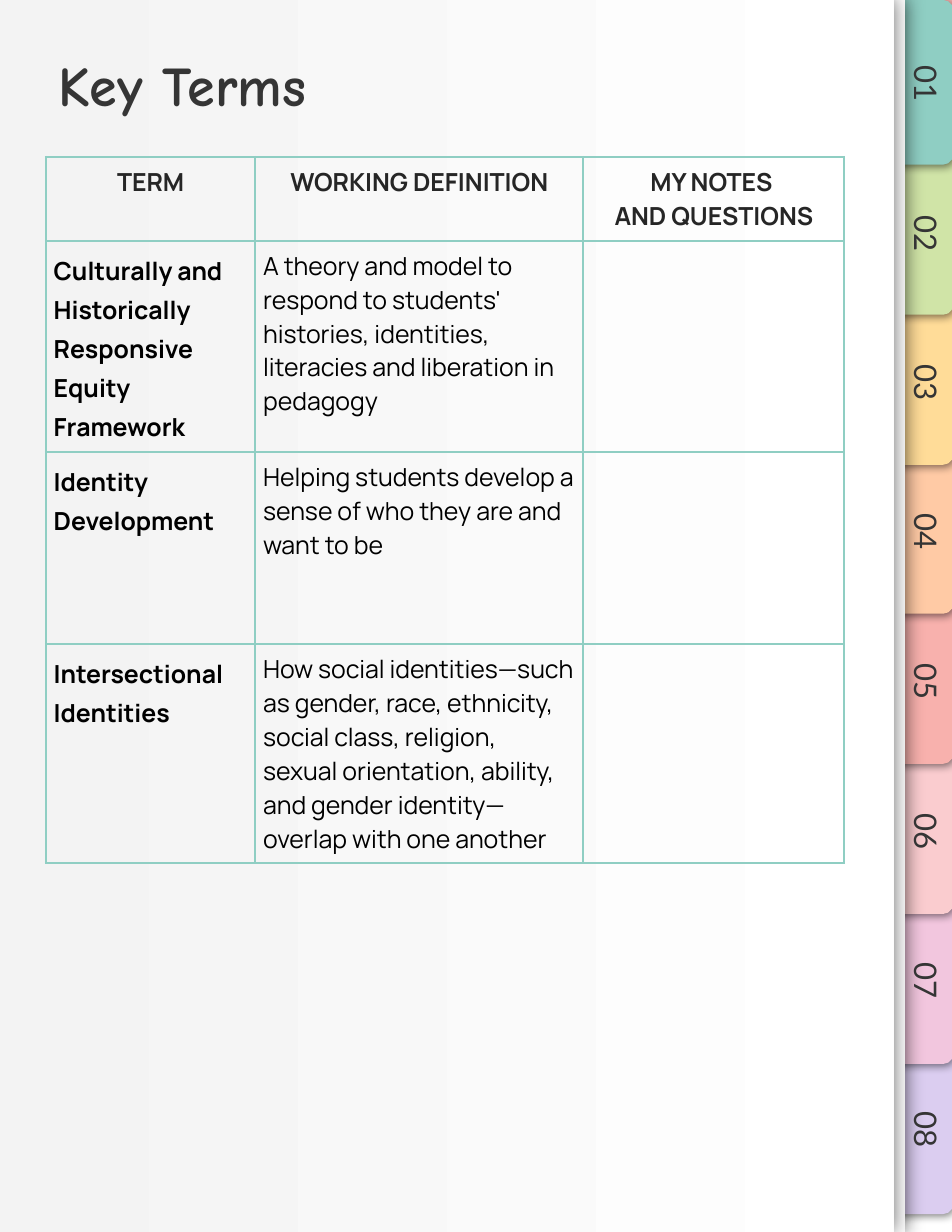
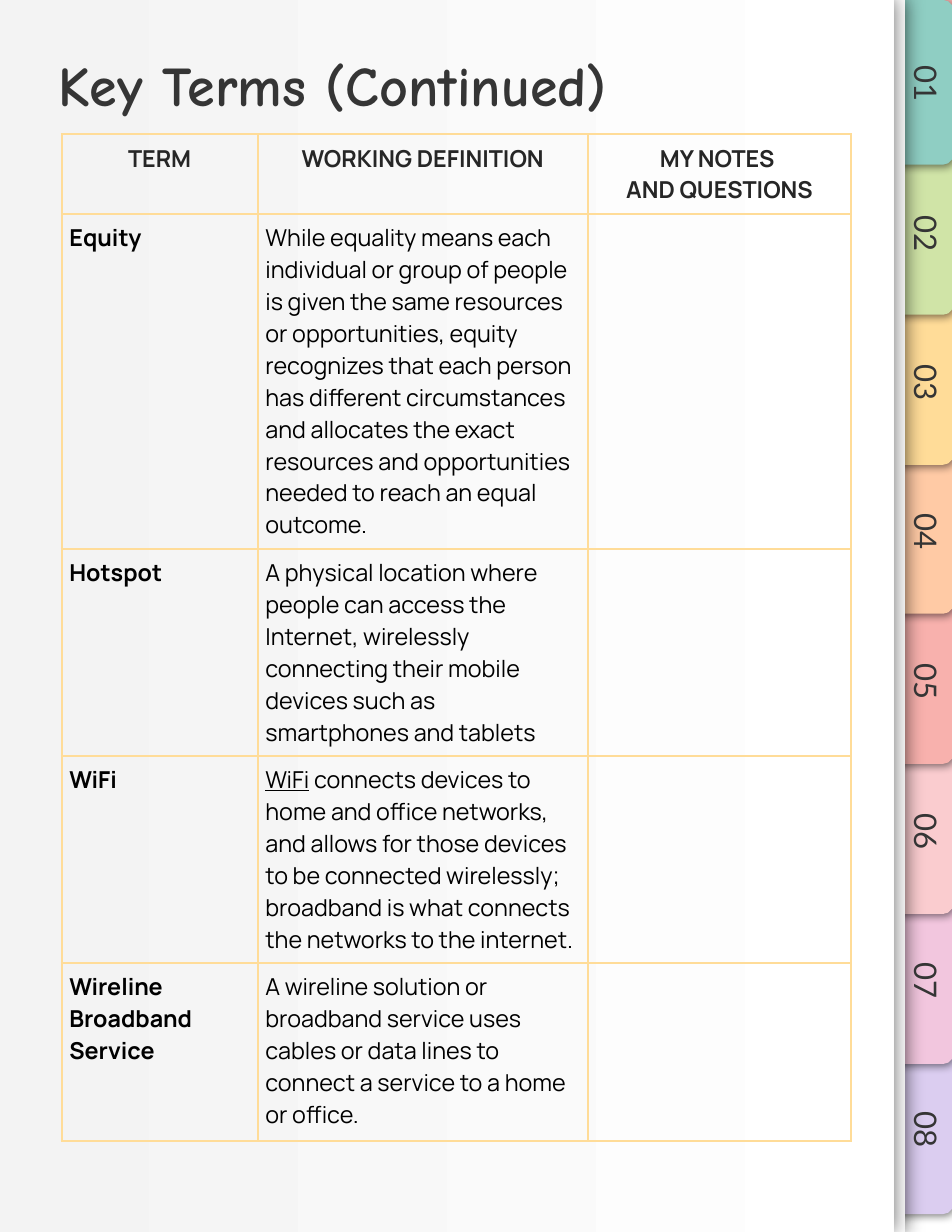
"""Build two key-terms pages of a tabbed notebook."""
import lxml.etree
import pptx
import pptx.dml.color
import pptx.enum.shapes
import pptx.enum.text
import pptx.oxml.ns
import pptx.util

PX = 9144
W, H = 850, 1100

RGB = pptx.dml.color.RGBColor
SHAPE = pptx.enum.shapes.MSO_SHAPE
ALIGN = pptx.enum.text.PP_ALIGN
ANCHOR = pptx.enum.text.MSO_ANCHOR

WHITE = RGB(0xFF, 0xFF, 0xFF)
BLACK = RGB(0x00, 0x00, 0x00)
GREY = RGB(0xF3, 0xF3, 0xF3)
INK = RGB(0x35, 0x35, 0x35)
HEAD = RGB(0x26, 0x26, 0x26)
TEAL = RGB(0x8F, 0xCE, 0xC3)
GREEN = RGB(0xD0, 0xE4, 0xA7)
YELLOW = RGB(0xFF, 0xDC, 0x98)
ORANGE = RGB(0xFF, 0xCA, 0xA5)
CORAL = RGB(0xF8, 0xB1, 0xAD)
ROSE = RGB(0xFA, 0xCC, 0xCF)
PINK = RGB(0xF2, 0xC6, 0xDE)
LILAC = RGB(0xDB, 0xCD, 0xF0)
TABS = [TEAL, GREEN, YELLOW, ORANGE, CORAL, ROSE, PINK, LILAC]

TAB_SHADOW = (5.6, 1.5, 61)
SHEET_SHADOW = (12.4, 0.8, 0)
HEADINGS = ["TERM", "WORKING DEFINITION", "MY NOTES \nAND QUESTIONS"]


def add(parent, tag, **attrs):
    """Append a DrawingML child element with the given attributes."""
    attrs = {k: str(v) for k, v in attrs.items()}
    return lxml.etree.SubElement(parent, pptx.oxml.ns.qn("a:" + tag), attrs)


def write(tf, text, size=16, font="Manrope", color=BLACK, bold=False,
          align=ALIGN.LEFT, spacing=None, underlined=""):
    """Write text into a frame, one paragraph per line, underlining its opening word if asked."""
    for i, line in enumerate(text.split("\n")):
        p = tf.add_paragraph() if i else tf.paragraphs[0]
        p.alignment = align
        if spacing:
            p.line_spacing = spacing
        for part, under in ((underlined, True), (line.removeprefix(underlined), False)):
            if not part:
                continue
            r = p.add_run()
            r.text = part
            r.font.size = pptx.util.Pt(size)
            r.font.name = font
            r.font.bold = bold
            r.font.underline = under
            r.font.color.rgb = color


class Notebook:
    """Holds the presentation, its style and the current slide."""

    def __init__(self):
        """Start an empty letter-size presentation."""
        self.prs = pptx.Presentation()
        self.prs.slide_width, self.prs.slide_height = W * PX, H * PX
        self.slide = None

    def shape(self, kind, x, y, w, h, fill, line=None, rotation=0, shadow=None):
        """Add a filled preset shape; fill is one colour or a pair for a gradient."""
        sp = self.slide.shapes.add_shape(kind, x * PX, y * PX, w * PX, h * PX)
        sp.rotation = rotation
        if isinstance(fill, list):
            sp.fill.gradient()
            sp.fill.gradient_angle = 0
            for stop, color in zip(sp.fill.gradient_stops, fill):
                stop.color.rgb = color
        else:
            sp.fill.solid()
            sp.fill.fore_color.rgb = fill
        if line:
            sp.line.color.rgb = line
            sp.line.width = pptx.util.Pt(0.75)
        else:
            sp.line.fill.background()
        sp.shadow.inherit = False
        if shadow:
            blur, dist, angle = shadow
            effects = sp._element.spPr.find(pptx.oxml.ns.qn("a:effectLst"))
            outer = add(effects, "outerShdw", blurRad=int(blur * 12700),
                        dist=int(dist * 12700), dir=angle * 60000,
                        algn="bl", rotWithShape=0)
            add(add(outer, "srgbClr", val=BLACK), "alpha", val=50000)
        return sp

    def text(self, text, x, y, w, h, rotation=0, anchor=ANCHOR.TOP, **style):
        """Add a wrapped text box."""
        sp = self.slide.shapes.add_textbox(x * PX, y * PX, w * PX, h * PX)
        sp.rotation = rotation
        tf = sp.text_frame
        tf.word_wrap = True
        tf.vertical_anchor = anchor
        tf.margin_left = tf.margin_right = tf.margin_top = tf.margin_bottom = 10 * PX
        write(tf, text, **style)

    def page(self, title):
        """Start a page with its index tabs, paper sheets and title."""
        self.slide = self.prs.slides.add_slide(self.prs.slide_layouts[6])
        self.slide.background.fill.solid()
        self.slide.background.fill.fore_color.rgb = CORAL
        self.shape(SHAPE.RECTANGLE, 808, 858, 42, 242, WHITE, line=WHITE)
        for i, color in reversed(list(enumerate(TABS))):
            sp = self.shape(SHAPE.ROUND_2_SAME_RECTANGLE, 751, 47 + round(i * 133.8),
                            147, 53, color, rotation=90, shadow=TAB_SHADOW)
            sp.adjustments[0] = 0.167
        self.shape(SHAPE.RECTANGLE, 10, 0, 798, H, WHITE, shadow=SHEET_SHADOW)
        self.shape(SHAPE.RECTANGLE, 0, 0, 798, H, [GREY, WHITE], shadow=SHEET_SHADOW)
        for i in range(len(TABS)):
            self.text(f"{i + 1:02}", 760, 43 + round(i * 133.5), 144, 63, rotation=90,
                      anchor=ANCHOR.BOTTOM, size=20, font="Lato", color=INK,
                      align=ALIGN.CENTER)
        self.text(title, 42, 35, 712, 63, size=36, font="Comic Neue", color=INK, bold=True)

    def cell(self, cell, border):
        """Clear a cell's fill, set its margins and draw its four borders."""
        cell.margin_left = cell.margin_right = cell.margin_top = cell.margin_bottom = 7 * PX
        cell.fill.background()
        props = cell._tc.get_or_add_tcPr()
        for i, side in enumerate("LRTB"):
            ln = add(props, "ln" + side, w=19050)
            add(add(ln, "solidFill"), "srgbClr", val=border)
            props.insert(i, ln)

    def table(self, x, y, widths, heights, terms, border, size, term_spacing=None):
        """Add a table of terms and definitions with an empty notes column."""
        table = self.slide.shapes.add_table(
            len(heights), len(widths), x * PX, y * PX,
            sum(widths) * PX, sum(heights) * PX).table
        table.first_row = table.horz_banding = False
        for col, width in zip(table.columns, widths):
            col.width = width * PX
        for row, height in zip(table.rows, heights):
            row.height = height * PX
        for cell in table.iter_cells():
            self.cell(cell, border)
        for i, heading in enumerate(HEADINGS):
            write(table.cell(0, i).text_frame, heading, size=size, color=HEAD,
                  bold=True, align=ALIGN.CENTER)
        for i, (term, definition, *underlined) in enumerate(terms, 1):
            write(table.cell(i, 0).text_frame, term, size=size, bold=True,
                  spacing=term_spacing)
            write(table.cell(i, 1).text_frame, definition, size=size,
                  underlined="".join(underlined))


IDENTITY_TERMS = [
    ("Culturally and Historically Responsive Equity Framework",
     "A theory and model to respond to students' histories, identities, "
     "literacies and liberation in pedagogy"),
    ("Identity Development",
     "Helping students develop a sense of who they are and want to be"),
    ("Intersectional Identities",
     "How social identities—such as gender, race, ethnicity, social class, religion, "
     "sexual orientation, ability, and gender identity—overlap with one another"),
]
ACCESS_TERMS = [
    ("Equity",
     "While equality means each individual or group of people is given the same "
     "resources or opportunities, equity recognizes that each person has different "
     "circumstances and allocates the exact resources and opportunities needed to "
     "reach an equal outcome."),
    ("Hotspot",
     "A physical location where people can access the Internet, wirelessly connecting "
     "their mobile devices such as smartphones and tablets"),
    ("WiFi",
     "WiFi connects devices to home and office networks, and allows for those devices "
     "to be connected wirelessly; broadband is what connects the networks to the "
     "internet.", "WiFi"),
    ("Wireline Broadband Service",
     "A wireline solution or broadband service uses cables or data lines to connect a "
     "service to a home or office."),
]


def main():
    """Build both pages and save them."""
    book = Notebook()
    book.page("Key Terms")
    book.table(41, 140, [187, 293, 233], [75, 189, 171, 196], IDENTITY_TERMS, TEAL, 16,
               term_spacing=1.15)
    book.page("Key Terms (Continued)")
    book.table(55, 120, [175, 295, 235], [71, 299, 185, 185, 159], ACCESS_TERMS, YELLOW, 15)
    book.prs.save("out.pptx")


if __name__ == "__main__":
    main()
